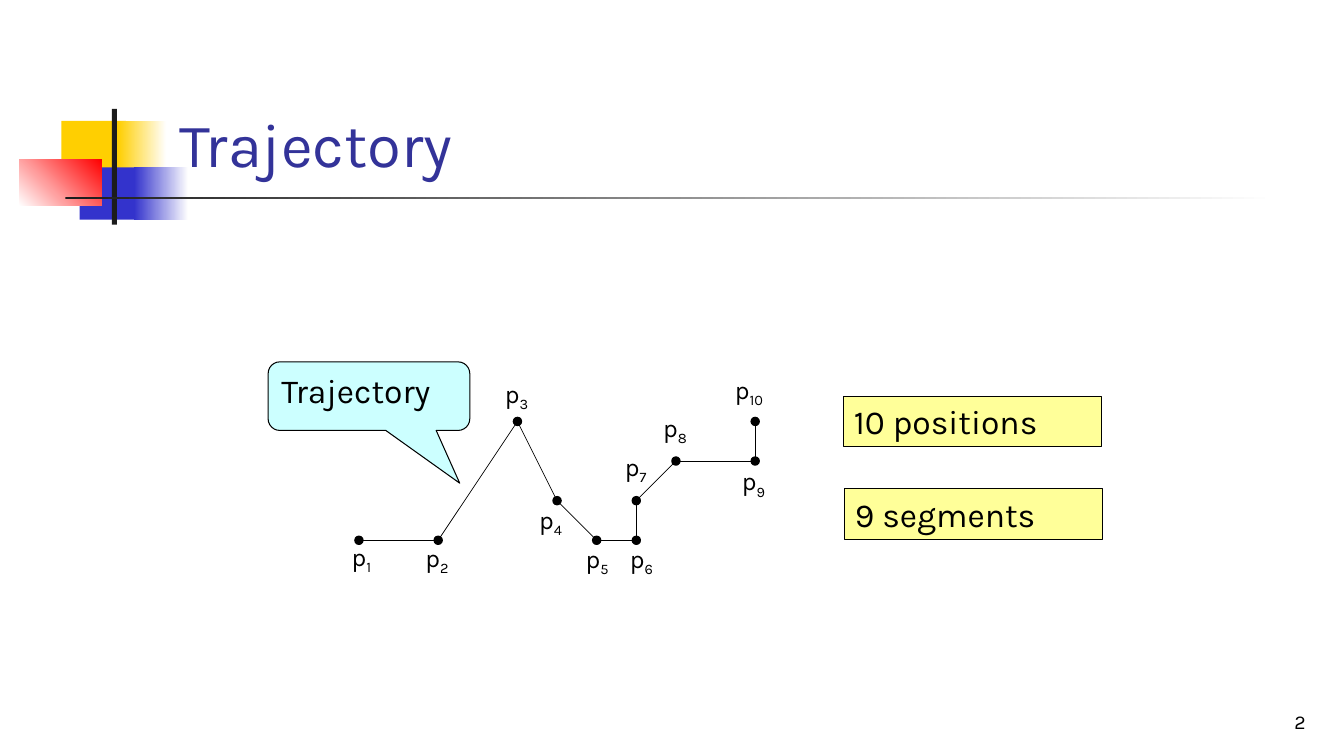
from pptx import Presentation
from pptx.dml.color import RGBColor
from pptx.enum.shapes import MSO_CONNECTOR, MSO_SHAPE
from pptx.enum.text import MSO_ANCHOR, MSO_AUTO_SIZE, PP_ALIGN
from pptx.oxml.ns import qn
from pptx.util import Inches, Pt
from lxml.etree import SubElement

FONT = "Karla"
COLORS = {
    "gold": "FFCF01", "blue": "3333CC", "red": "FF0000", "dark": "1C1C1C",
    "white": "FFFFFF", "black": "000000", "title": "333399",
    "cyan": "CCFFFF", "cream": "FFFF99",
}

# Left, top, width, height, start colour, end colour, angle
DECOR = [
    (0.61, 1.2, 0.64, 0.52, "gold", None, 0),
    (1.17, 1.2, 0.48, 0.52, "gold", "white", 0),
    (0.79, 1.66, 0.62, 0.52, "blue", None, 0),
    (1.33, 1.66, 0.54, 0.52, "blue", "white", 0),
    (0.19, 1.58, 0.82, 0.46, "white", "red", 45),
    (1.11, 1.08, 0.05, 1.15, "dark", None, 0),
    (0.65, 1.95, 12, 0.03, "dark", "white", 0),
]

# Grid column and row of each point, then left and top of its label
POINTS = [
    (0, 0, 3.39, 5.32), (2, 0, 4.12, 5.33), (4, 3, 4.91, 3.7),
    (5, 1, 5.25, 4.95), (6, 0, 5.71, 5.34), (7, 0, 6.15, 5.34),
    (7, 1, 6.1, 4.43), (8, 2, 6.48, 4.04), (10, 2, 7.26, 4.57),
    (10, 3, 7.19, 3.66),
]
LEFT, BASE = 3.56, 5.36
STEP = 3.93 / 10
DOT = 0.08


def color(name):
    return RGBColor.from_string(COLORS[name])


def write(shape, text, size, name="black", align=PP_ALIGN.LEFT,
          anchor=MSO_ANCHOR.TOP):
    frame = shape.text_frame
    frame.word_wrap = True
    frame.auto_size = MSO_AUTO_SIZE.NONE
    frame.vertical_anchor = anchor
    para = frame.paragraphs[0]
    para.text = text
    para.alignment = align
    para.font.name = FONT
    para.font.size = Pt(size)
    para.font.color.rgb = color(name)
    return para


def add_shape(slide, kind, box, fill, line=None):
    shape = slide.shapes.add_shape(kind, *map(Inches, box))
    shape.shadow.inherit = False
    shape.fill.solid()
    shape.fill.fore_color.rgb = color(fill)
    if line:
        shape.line.color.rgb = color("black")
        shape.line.width = Pt(line)
    else:
        shape.line.fill.background()
    return shape


def add_decor(slide):
    for *box, start, end, angle in DECOR:
        shape = add_shape(slide, MSO_SHAPE.RECTANGLE, box, start)
        if end:
            shape.fill.gradient()
            shape.fill.gradient_angle = angle
            for stop, name in zip(shape.fill.gradient_stops, (start, end)):
                stop.color.rgb = color(name)


def add_title(slide, text):
    title = slide.shapes.title
    title.left, title.top = Inches(1.68), Inches(0.23)
    title.width, title.height = Inches(11.36), Inches(1.6)
    write(title, text, 44, "title", anchor=MSO_ANCHOR.BOTTOM)
    # Bring the title in front of the decoration
    title.element.getparent().append(title.element)


def add_text(slide, box, text, size, **style):
    shape = slide.shapes.add_textbox(*map(Inches, box))
    return write(shape, text, size, **style)


def add_line(slide, start, end):
    line = slide.shapes.add_connector(
        MSO_CONNECTOR.STRAIGHT, *map(Inches, start + end))
    line.line.color.rgb = color("black")
    line.line.width = Pt(0.5)
    SubElement(line.element.spPr, qn("a:effectLst"))


def add_label(slide, left, top, index):
    width = 0.6 if index > 9 else 0.5
    para = add_text(slide, (left, top, width, 0.4), "p", 18)
    run = para.add_run()
    run.text = str(index)
    run.font._element.set("baseline", "-25000")


def add_path(slide):
    spots = [(LEFT + col * STEP, BASE - row * STEP)
             for col, row, *_ in POINTS]
    for start, end in zip(spots, spots[1:]):
        add_line(slide, start, end)
    for x, y in spots:
        box = (x - DOT / 2, y - DOT / 2, DOT, DOT)
        add_shape(slide, MSO_SHAPE.OVAL, box, "black", 1)
    for index, (*_, left, top) in enumerate(POINTS, 1):
        add_label(slide, left, top, index)


def add_note(slide, kind, box, fill, text):
    shape = add_shape(slide, kind, box, fill, 0.75)
    write(shape, text, 24)
    return shape


def main():
    deck = Presentation()
    deck.slide_width, deck.slide_height = Inches(13.33), Inches(7.5)
    slide = deck.slides.add_slide(deck.slide_layouts[5])

    # Heading and page number
    add_decor(slide)
    add_title(slide, "Trajectory")
    add_text(slide, (10.27, 6.83, 2.78, 0.5), "2", 14,
             align=PP_ALIGN.RIGHT, anchor=MSO_ANCHOR.BOTTOM)

    # Trajectory with its points
    add_path(slide)

    # Callout and counts
    callout = add_note(slide, MSO_SHAPE.ROUNDED_RECTANGULAR_CALLOUT,
                       (2.66, 3.59, 2, 0.68), "cyan", "Trajectory")
    for index, value in enumerate((0.45, 1.27, 0.17)):
        callout.adjustments[index] = value
    for left, top, text in ((8.37, 3.93, "10 positions"),
                            (8.38, 4.85, "9 segments")):
        add_note(slide, MSO_SHAPE.RECTANGLE, (left, top, 2.56, 0.5),
                 "cream", text)

    deck.save("out.pptx")


if __name__ == "__main__":
    main()
